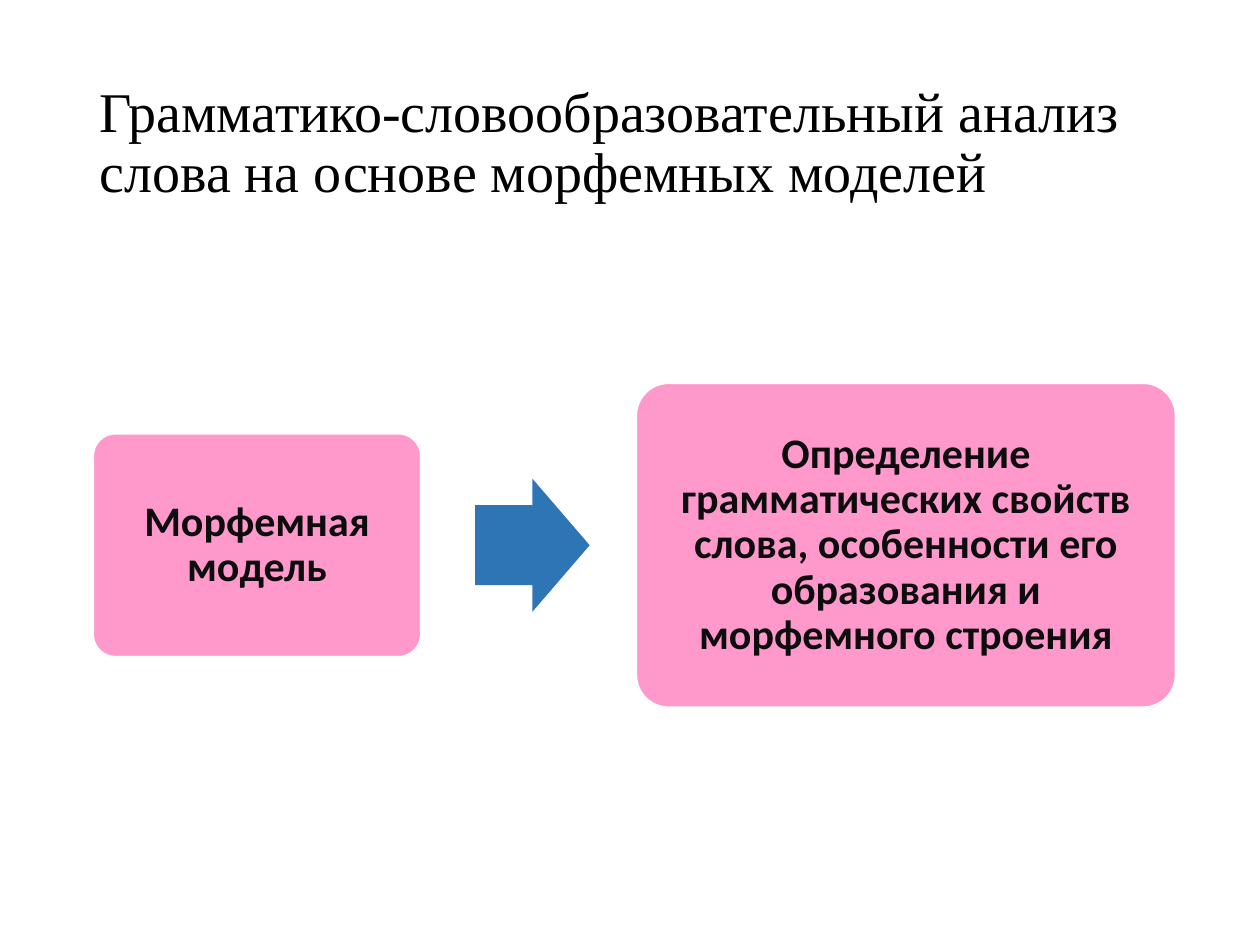
from dataclasses import dataclass

from pptx import Presentation
from pptx.dml.color import RGBColor
from pptx.enum.shapes import MSO_SHAPE
from pptx.enum.text import MSO_ANCHOR, PP_ALIGN
from pptx.util import Inches, Pt

ROUND_RECT = MSO_SHAPE.ROUNDED_RECTANGLE
RIGHT_ARROW = MSO_SHAPE.RIGHT_ARROW
MIDDLE = MSO_ANCHOR.MIDDLE
LEFT, CENTER = PP_ALIGN.LEFT, PP_ALIGN.CENTER
TITLE_ONLY = 5


@dataclass(frozen=True)
class Theme:
    pink: RGBColor = RGBColor(0xFF, 0x99, 0xCC)
    blue: RGBColor = RGBColor(0x2E, 0x75, 0xB6)
    white: RGBColor = RGBColor(0xFF, 0xFF, 0xFF)
    black: RGBColor = RGBColor(0x00, 0x00, 0x00)
    ink: RGBColor = RGBColor(0x0D, 0x0D, 0x0D)
    title_font: str = "Times New Roman"
    body_font: str = "Calibri"
    title_size: Pt = Pt(32)
    body_size: Pt = Pt(24)
    line_spacing: float = 0.9


def apply(obj, values):
    for name, value in values.items():
        setattr(obj, name, value)


class Deck:
    def __init__(self, theme):
        self.theme = theme
        self.prs = Presentation()
        apply(self.prs, {"slide_width": Inches(10), "slide_height": Inches(7.5)})
        self.slide = None

    def new_slide(self):
        self.slide = self.prs.slides.add_slide(self.prs.slide_layouts[TITLE_ONLY])

    def area(self, x, y, w, h):
        width, height = self.prs.slide_width, self.prs.slide_height
        return {"left": round(x * width), "top": round(y * height),
                "width": round(w * width), "height": round(h * height)}

    def fill_text(self, sp, text, align, font, color):
        tf = sp.text_frame
        apply(tf, {"word_wrap": True, "vertical_anchor": MIDDLE})
        p = tf.paragraphs[0]
        apply(p, {"alignment": align, "line_spacing": self.theme.line_spacing})
        r = p.add_run()
        r.text = text
        apply(r.font, font)
        r.font.color.rgb = color

    def title(self, text, x, y, w, h):
        sp = self.slide.shapes.title
        apply(sp, self.area(x, y, w, h))
        font = {"name": self.theme.title_font, "size": self.theme.title_size}
        self.fill_text(sp, text, LEFT, font, self.theme.black)

    def shape(self, kind, fill, adjustments, x, middle, w, h):
        box = self.area(x, middle - h / 2, w, h)
        sp = self.slide.shapes.add_shape(kind, **box)
        sp.shadow.inherit = False
        for i, value in enumerate(adjustments):
            sp.adjustments[i] = value
        sp.fill.solid()
        sp.fill.fore_color.rgb = fill
        sp.line.fill.background()
        return sp

    def card(self, text, x, middle, w, h):
        sp = self.shape(ROUND_RECT, self.theme.pink, [0.1], x, middle, w, h)
        sp.line.color.rgb = self.theme.white
        sp.line.width = Pt(1)
        sides = ("left", "top", "right", "bottom")
        apply(sp.text_frame, {f"margin_{side}": Inches(0.1) for side in sides})
        font = {"name": self.theme.body_font, "size": self.theme.body_size, "bold": True}
        self.fill_text(sp, text, CENTER, font, self.theme.ink)

    def arrow(self, x, middle, w, h):
        self.shape(RIGHT_ARROW, self.theme.blue, [0.6, 0.5], x, middle, w, h)


def main():
    deck = Deck(Theme())
    deck.new_slide()
    deck.title("Грамматико-словообразовательный анализ слова на основе морфемных моделей",
               0.069, 0.08, 0.862, 0.145)
    middle = 0.577
    deck.card("Морфемная модель", 0.074, middle, 0.26, 0.236)
    deck.arrow(0.377, middle, 0.091, 0.141)
    deck.card("Определение грамматических свойств слова, особенности его образования "
              "и морфемного строения", 0.505, middle, 0.428, 0.343)
    deck.prs.save("out.pptx")


if __name__ == "__main__":
    main()
